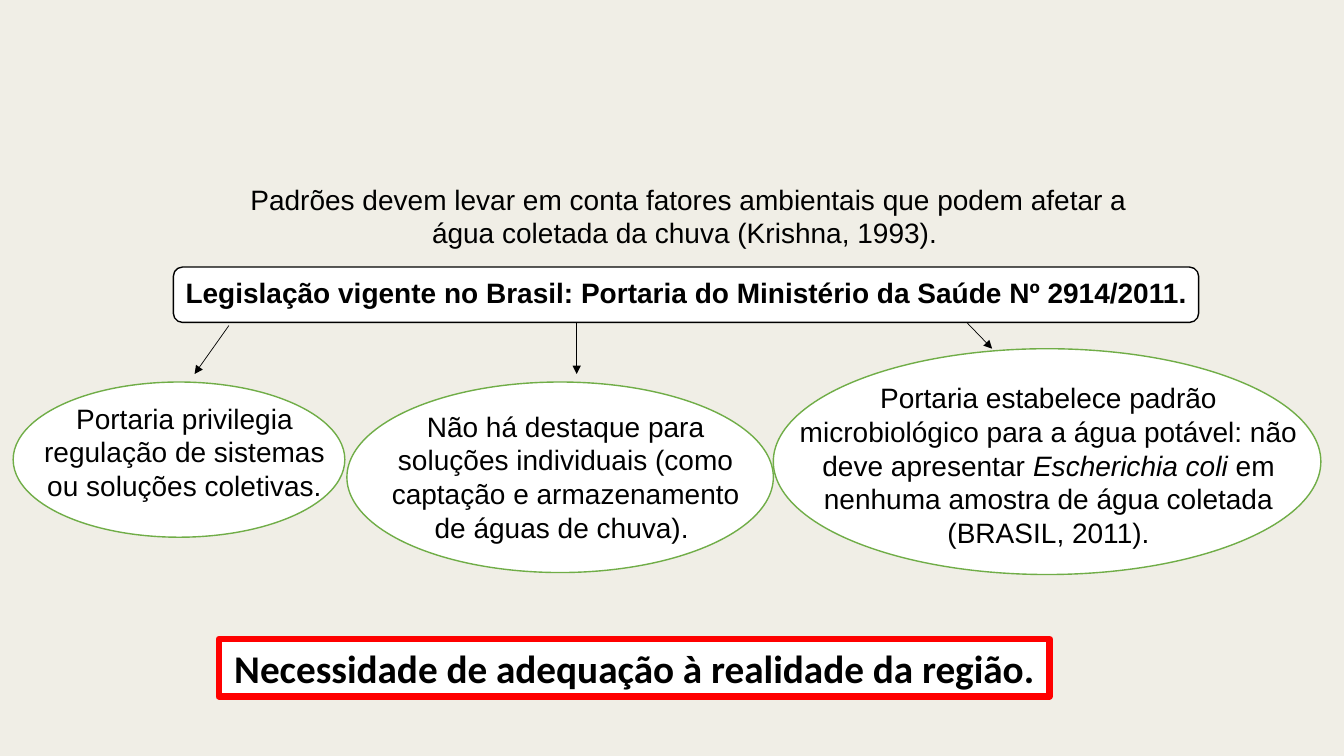
from dataclasses import dataclass

from lxml import etree
from pptx import Presentation
from pptx.dml.color import RGBColor
from pptx.enum.shapes import MSO_CONNECTOR, MSO_SHAPE
from pptx.enum.text import MSO_ANCHOR, MSO_AUTO_SIZE, PP_ALIGN
from pptx.oxml.ns import qn
from pptx.shapes.autoshape import Shape
from pptx.slide import Slide
from pptx.util import Inches, Pt

ELLIPSE = MSO_SHAPE.OVAL
RECTANGLE = MSO_SHAPE.RECTANGLE
ROUNDED = MSO_SHAPE.ROUNDED_RECTANGLE
STRAIGHT = MSO_CONNECTOR.STRAIGHT
CENTER = PP_ALIGN.CENTER
TOP = MSO_ANCHOR.TOP
FIT_SHAPE = MSO_AUTO_SIZE.SHAPE_TO_FIT_TEXT

SAND = RGBColor(0xF0, 0xEE, 0xE6)
WHITE = RGBColor(0xFF, 0xFF, 0xFF)
BLACK = RGBColor(0x00, 0x00, 0x00)
GREEN = RGBColor(0x70, 0xAD, 0x47)
RED = RGBColor(0xFF, 0x00, 0x00)

SLIDE_WIDTH = Inches(13.33)
SLIDE_HEIGHT = Inches(7.5)


@dataclass(frozen=True)
class Area:
    """Position and size as percentages of the slide."""

    left: float
    top: float
    width: float
    height: float

    def lengths(self) -> tuple[int, int, int, int]:
        return (across(self.left), down(self.top), across(self.width), down(self.height))


@dataclass(frozen=True)
class Outline:
    area: Area
    kind: MSO_SHAPE
    color: RGBColor
    weight: float = 1


@dataclass(frozen=True)
class Span:
    text: str
    italic: bool = False


@dataclass(frozen=True)
class Label:
    area: Area
    spans: tuple[Span, ...]
    bold: bool = False


@dataclass(frozen=True)
class Arrow:
    start: tuple[float, float]
    end: tuple[float, float]


OUTLINES = (
    Outline(Area(57.54, 46.13, 40.74, 29.87), ELLIPSE, GREEN),
    Outline(Area(25.81, 50.53, 31.73, 25.2), ELLIPSE, GREEN),
    Outline(Area(0.98, 50.53, 24.68, 20.53), ELLIPSE, GREEN),
    Outline(Area(12.9, 35.33, 76.29, 7.33), ROUNDED, BLACK),
)

LABELS = (
    Label(Area(17.03, 23.47, 68.42, 10.27), (
        Span("Padrões devem levar em conta fatores ambientais que podem afetar a "
             "água coletada da chuva (Krishna, 1993). "),
    )),
    Label(Area(1.65, 52.4, 24.16, 14.8), (
        Span("Portaria privilegia regulação de sistemas ou soluções coletivas."),
    )),
    Label(Area(27.91, 53.47, 28.36, 19.33), (
        Span("Não há destaque para soluções individuais (como captação e "
             "armazenamento de águas de chuva). "),
    )),
    Label(Area(58.74, 49.73, 38.56, 23.73), (
        Span("Portaria estabelece padrão microbiológico para a água potável: "
             "não deve apresentar "),
        Span("Escherichia coli", italic=True),
        Span(" em nenhuma amostra de água coletada (BRASIL, 2011)."),
    )),
    Label(Area(10.58, 35.73, 81.02, 5.87), (
        Span("Legislação vigente no Brasil: Portaria do Ministério da Saúde Nº 2914/2011."),
    ), bold=True),
)

CONCLUSION_OUTLINE = Outline(Area(16.28, 84.53, 61.82, 7.6), RECTANGLE, RED, 4.5)
CONCLUSION = (Span("Necessidade de adequação à realidade da região."),)

ARROWS = (
    Arrow((17.03, 43.07), (14.48, 49.47)),
    Arrow((42.91, 42.67), (42.91, 49.47)),
    Arrow((71.94, 42.67), (73.82, 46.13)),
)


def across(percent: float) -> int:
    return round(SLIDE_WIDTH * percent / 100)


def down(percent: float) -> int:
    return round(SLIDE_HEIGHT * percent / 100)


def draw_outline(page: Slide, outline: Outline) -> Shape:
    shape = page.shapes.add_shape(outline.kind, *outline.area.lengths())
    shape.shadow.inherit = False
    shape.fill.solid()
    shape.fill.fore_color.rgb = WHITE
    shape.line.color.rgb = outline.color
    shape.line.width = Pt(outline.weight)
    return shape


def write(box: Shape, spans: tuple[Span, ...], font: str, size: float,
          bold: bool, wrap: bool) -> None:
    frame = box.text_frame
    frame.word_wrap = wrap
    frame.auto_size = FIT_SHAPE
    frame.vertical_anchor = TOP
    para = frame.paragraphs[0]
    para.alignment = CENTER
    para.font.name = font
    para.font.size = Pt(size)
    para.font.bold = bold
    para.font.color.rgb = BLACK
    for span in spans:
        run = para.add_run()
        run.text = span.text
        if span.italic:
            run.font.italic = True


def draw_label(page: Slide, label: Label) -> None:
    box = page.shapes.add_textbox(*label.area.lengths())
    write(box, label.spans, "Arial", 20, label.bold, wrap=True)


def draw_arrow(page: Slide, arrow: Arrow) -> None:
    (start_x, start_y), (end_x, end_y) = arrow.start, arrow.end
    connector = page.shapes.add_connector(
        STRAIGHT, across(start_x), down(start_y), across(end_x), down(end_y))
    connector.line.color.rgb = BLACK
    connector.line.width = Pt(0.5)
    line = connector.line._get_or_add_ln()
    etree.SubElement(line, qn("a:tailEnd"), type="triangle")
    etree.SubElement(connector._element.spPr, qn("a:effectLst"))


def main() -> None:
    deck = Presentation()
    deck.slide_width = SLIDE_WIDTH
    deck.slide_height = SLIDE_HEIGHT
    page = deck.slides.add_slide(deck.slide_layouts[6])
    page.background.fill.solid()
    page.background.fill.fore_color.rgb = SAND

    for outline in OUTLINES:
        draw_outline(page, outline)
    for label in LABELS:
        draw_label(page, label)
    conclusion = draw_outline(page, CONCLUSION_OUTLINE)
    write(conclusion, CONCLUSION, "Calibri", 28, bold=True, wrap=False)
    for arrow in ARROWS:
        draw_arrow(page, arrow)

    deck.save("out.pptx")


if __name__ == "__main__":
    main()
